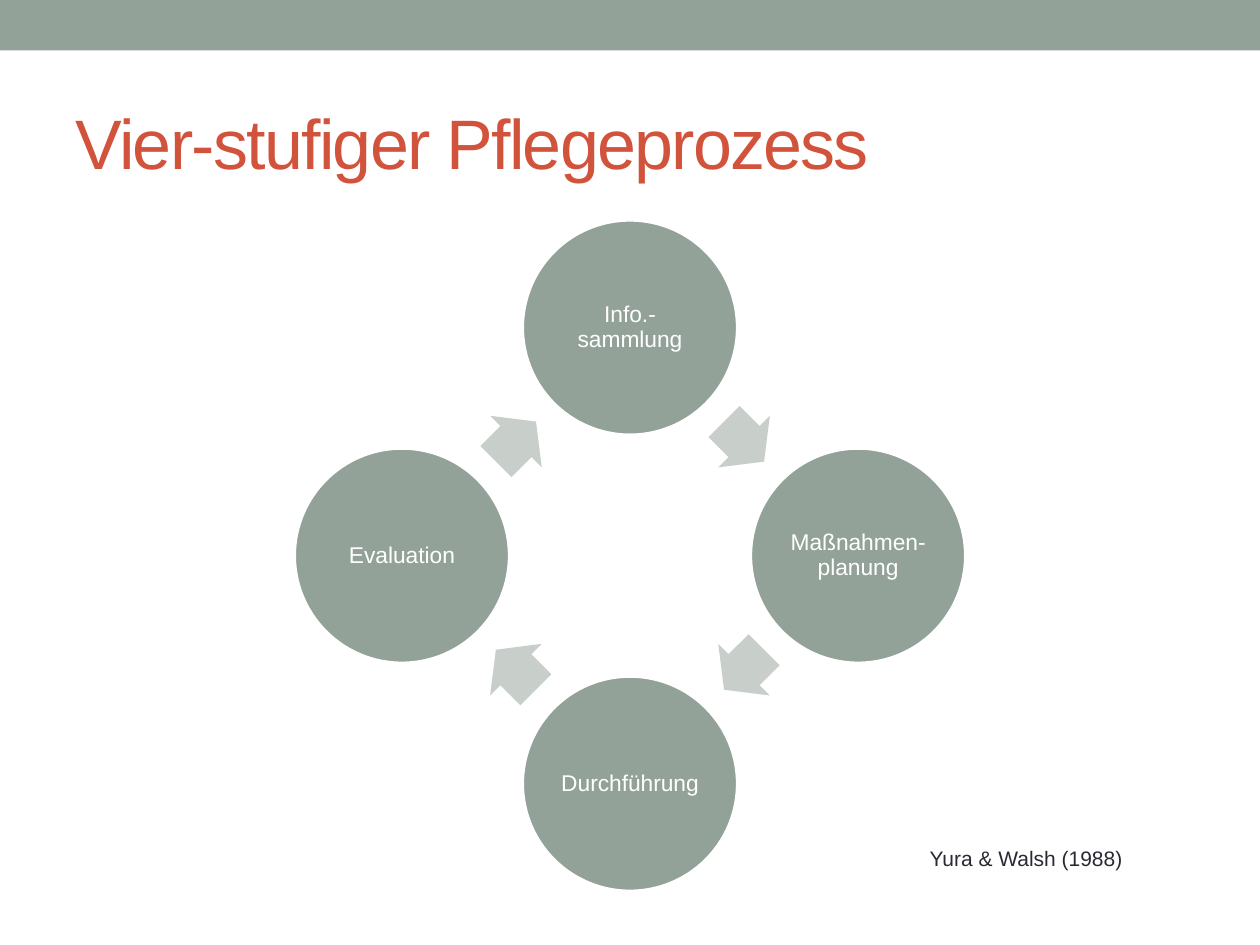
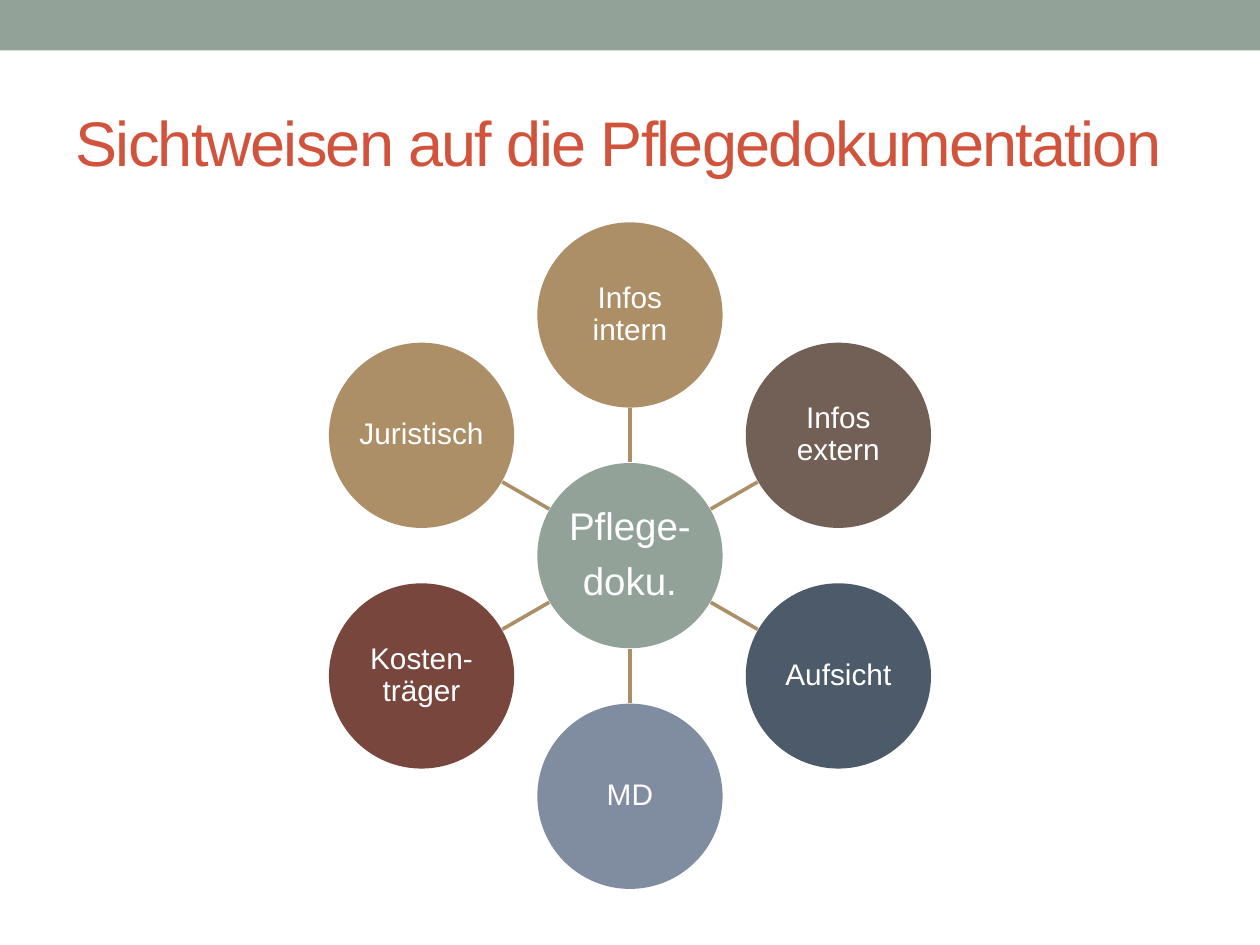
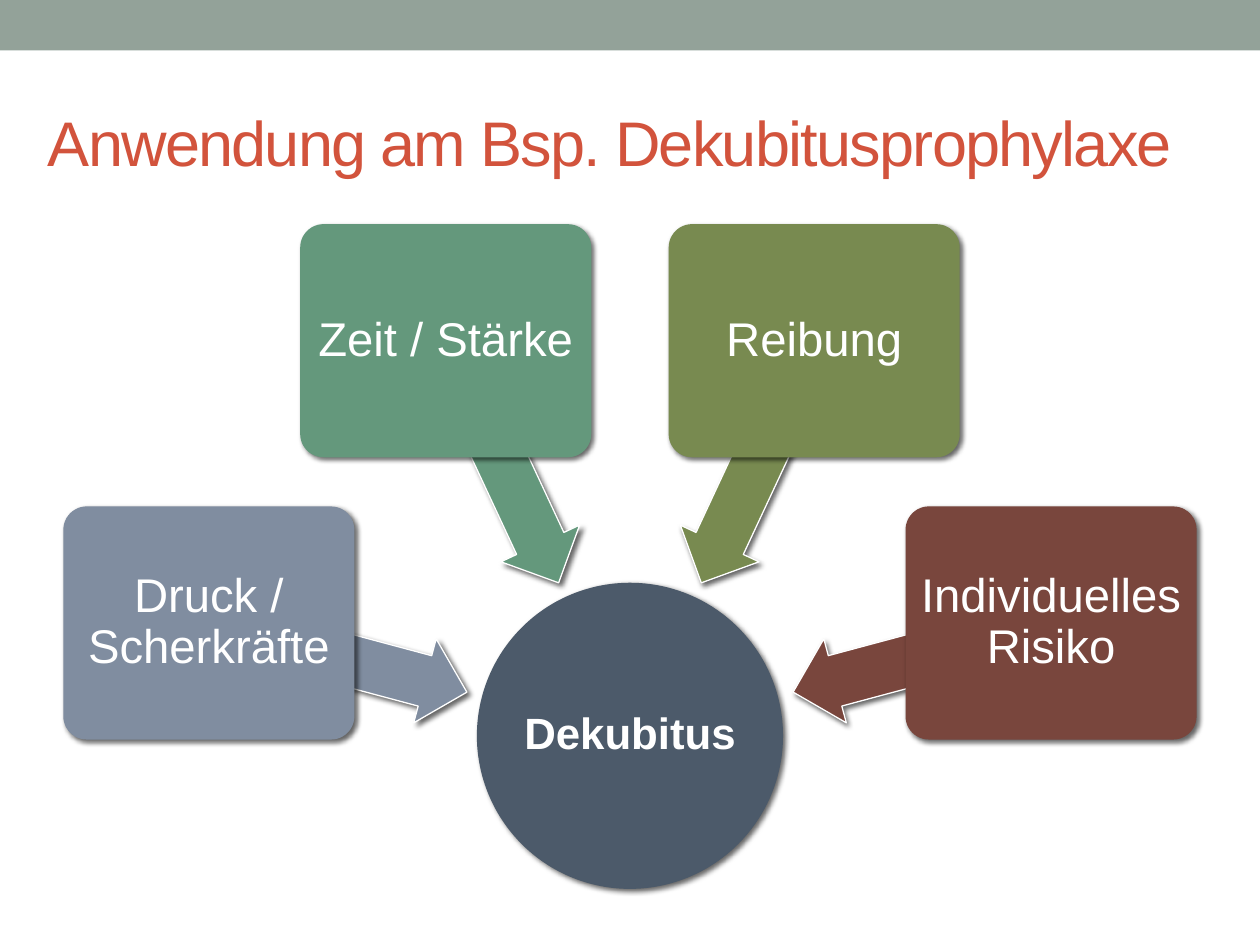
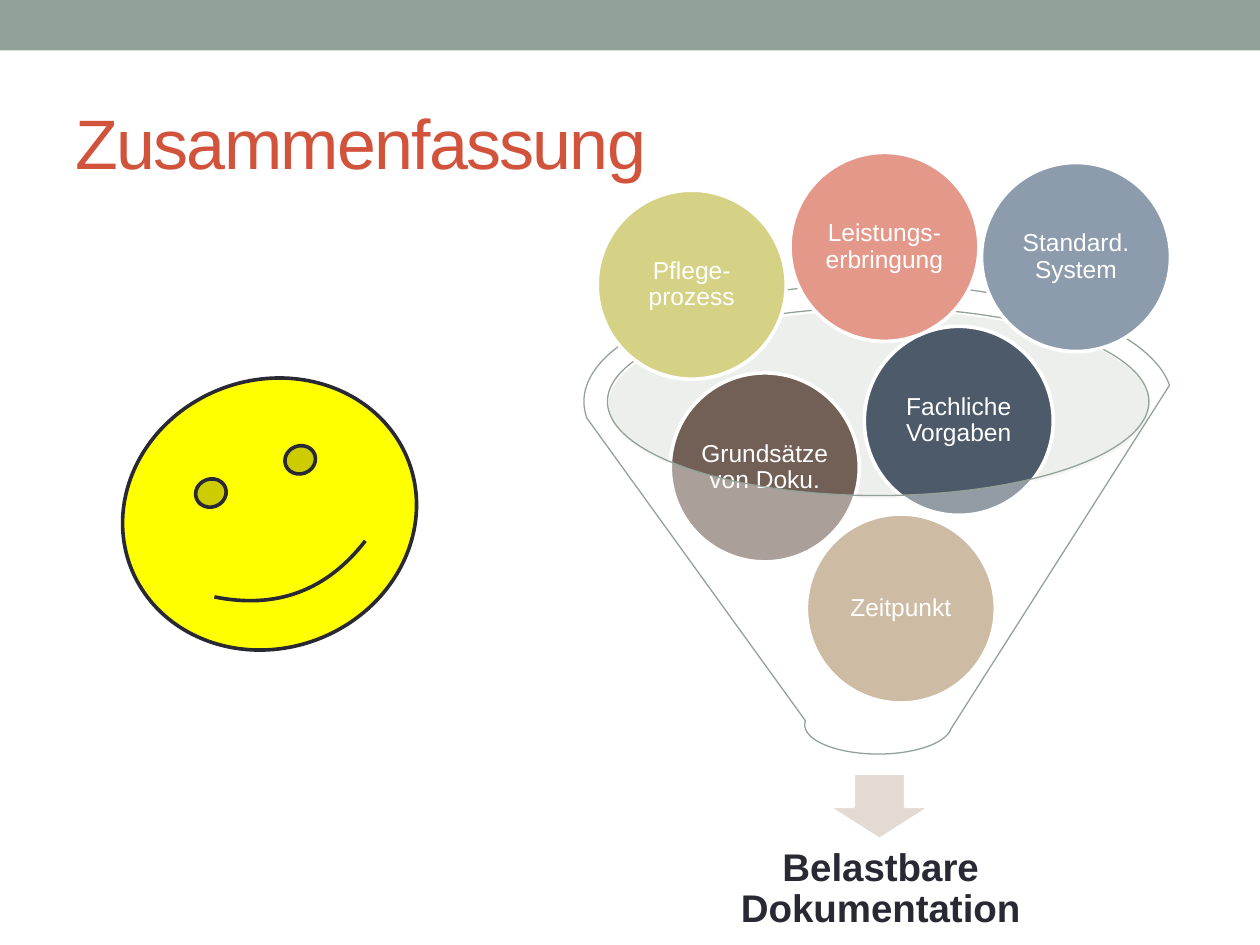
"""Build four slides on the nursing process and its records."""
import dataclasses
import math

import lxml.etree
import pptx
import pptx.dml.color
import pptx.enum.shapes
import pptx.enum.text
import pptx.oxml.ns
import pptx.util


@dataclasses.dataclass(frozen=True)
class Theme:
    font: str = "Arial"
    sage: str = "93A299"
    pale: str = "C8CECA"
    mist: str = "D2D7D4"
    red: str = "D2533C"
    ink: str = "292934"
    white: str = "FFFFFF"
    black: str = "000000"
    tan: str = "AD8F67"
    sand: str = "E3DBD3"
    brown: str = "726056"
    slate: str = "4C5A6A"
    blue: str = "808DA0"
    sky: str = "8C9CAD"
    rust: str = "79463D"
    green: str = "64987C"
    olive: str = "788A50"
    rose: str = "E4988A"
    lime: str = "D5D286"
    yellow: str = "FFFF00"
    head: int = 40
    tight: int = 36
    step: int = 13
    note: int = 12
    view: int = 17
    hub: int = 22
    cause: int = 27
    core: int = 25
    ball: int = 14
    thick: float = 2.08
    thin: float = 0.75


look = Theme()
Inches = pptx.util.Inches
Pt = pptx.util.Pt
RGB = pptx.dml.color.RGBColor.from_string
qn = pptx.oxml.ns.qn
kinds = pptx.enum.shapes.MSO_SHAPE
aligns = pptx.enum.text.PP_ALIGN
middle = pptx.enum.text.MSO_ANCHOR.MIDDLE


def write(shape, text, size, color=look.white, bold=False, inset=0.02,
          align=aligns.CENTER, space=0.9):
    """Fill a shape with formatted text."""
    frame = shape.text_frame
    frame.text = text
    edge = Inches(inset)
    form = {"word_wrap": True, "vertical_anchor": middle,
            "auto_size": pptx.enum.text.MSO_AUTO_SIZE.NONE,
            "margin_left": edge, "margin_right": edge,
            "margin_top": edge, "margin_bottom": edge}
    for key, value in form.items():
        setattr(frame, key, value)
    for para in frame.paragraphs:
        form = {"alignment": align, "line_spacing": space,
                "space_before": Pt(0), "space_after": Pt(0.35 * size)}
        for key, value in form.items():
            setattr(para, key, value)
        for run in para.runs:
            form = {"name": look.font, "size": Pt(size), "bold": bold}
            for key, value in form.items():
                setattr(run.font, key, value)
            run.font.color.rgb = RGB(color)


def put(slide, kind, x, y, wide, high, fill, line=None, width=look.thick,
        turn=0, bends=(), alpha=None, shade=False):
    """Add a preset shape centred on x, y."""
    shape = slide.shapes.add_shape(kind, Inches(x - wide / 2), Inches(y - high / 2),
                                   Inches(wide), Inches(high))
    shape.shadow.inherit = False
    shape.rotation = turn
    for i, bend in enumerate(bends):
        shape.adjustments[i] = bend
    shape.fill.solid()
    shape.fill.fore_color.rgb = RGB(fill)
    if line:
        shape.line.color.rgb = RGB(line)
        shape.line.width = Pt(width)
    else:
        shape.line.fill.background()
    props = shape.element.spPr
    if alpha:
        tone = props.find(qn("a:solidFill"))[0]
        lxml.etree.SubElement(tone, qn("a:alpha"), val=str(alpha * 1000))
    if shade:
        glow = lxml.etree.SubElement(
            props.find(qn("a:effectLst")), qn("a:outerShdw"), blurRad=str(Pt(3)),
            dist=str(Pt(2)), dir="2700000", algn="ctr", rotWithShape="0")
        tone = lxml.etree.SubElement(glow, qn("a:srgbClr"), val=look.black)
        lxml.etree.SubElement(tone, qn("a:alpha"), val="60000")
    return shape


deck = pptx.Presentation()
deck.slide_width, deck.slide_height = Inches(10), Inches(7.5)

heads = [
    ("Vier-stufiger Pflegeprozess", look.head, 0.5),
    ("Sichtweisen auf die Pflegedokumentation", look.tight, 0.5),
    ("Anwendung am Bsp. Dekubitusprophylaxe", look.tight, 0.28),
    ("Zusammenfassung", look.head, 0.5),
]
slides = []
for text, size, left in heads:
    slide = deck.slides.add_slide(deck.slide_layouts[5])
    title = slide.shapes.title
    form = {"left": Inches(left), "top": Inches(0.58),
            "width": Inches(9.5 - left), "height": Inches(1.08)}
    for key, value in form.items():
        setattr(title, key, value)
    write(title, text, size, look.red, inset=0.1, align=aligns.LEFT, space=1.0)
    for props in title.element.iter(qn("a:rPr")):
        props.set("spc", "-100")
    slides.append(slide)
cycle, views, causes, recap = slides

band = put(cycle, kinds.RECTANGLE, 5, 0.2, 10, 0.4, look.sage)
deck.slide_master.shapes.element.insert(2, band.element)

midx, midy = 5, 4.41
steps = ["Info.-sammlung", "Maßnahmen-planung", "Durchführung", "Evaluation"]
for i, text in enumerate(steps):
    angle = math.radians(90 * i - 90)
    disc = put(cycle, kinds.OVAL, midx + 1.81 * math.cos(angle),
               midy + 1.81 * math.sin(angle), 1.71, 1.71, look.sage, look.white)
    write(disc, text, look.step)
    angle += math.pi / 4
    put(cycle, kinds.RIGHT_ARROW, midx + 1.28 * math.cos(angle),
        midy + 1.28 * math.sin(angle), 0.45, 0.58, look.pale,
        turn=45 + 90 * i, bends=(0.6, 0.5))
note = cycle.shapes.add_textbox(Inches(7.28), Inches(6.66), Inches(1.97), Inches(0.3))
write(note, "Yura & Walsh (1988)", look.note, look.ink, inset=0.1,
      align=aligns.LEFT, space=1.0)

hub = put(views, kinds.OVAL, midx, midy, 1.47, 1.47, look.sage)
write(hub, "Pflege-\ndoku.", look.hub)
sights = [
    ("Infos intern", look.tan),
    ("Infos extern", look.brown),
    ("Aufsicht", look.slate),
    ("MD", look.blue),
    ("Kosten-träger", look.rust),
    ("Juristisch", look.tan),
]
for i, (text, color) in enumerate(sights):
    angle = math.radians(60 * i - 90)
    across, down = math.cos(angle), math.sin(angle)
    ends = [Inches(value) for reach in (0.74, 1.17)
            for value in (midx + reach * across, midy + reach * down)]
    spoke = views.shapes.add_connector(pptx.enum.shapes.MSO_CONNECTOR.STRAIGHT, *ends)
    spoke.line.color.rgb = RGB(look.tan)
    spoke.line.width = Pt(look.thick)
    lxml.etree.SubElement(spoke.element.spPr, qn("a:effectLst"))
    disc = put(views, kinds.OVAL, midx + 1.91 * across, midy + 1.91 * down,
               1.47, 1.47, color)
    write(disc, text, look.view, inset=0.01)

basey = 5.84
core = put(causes, kinds.OVAL, midx, basey, 2.43, 2.43, look.slate, shade=True)
write(core, "Dekubitus", look.core, bold=True)
risks = [
    ("Druck / Scherkräfte", look.blue),
    ("Zeit / Stärke", look.green),
    ("Reibung", look.olive),
    ("Individuelles Risiko", look.rust),
]
for i, (text, color) in enumerate(risks):
    turn = 195 + 50 * i
    across, down = math.cos(math.radians(turn)), math.sin(math.radians(turn))
    put(causes, kinds.LEFT_ARROW, midx + 2.4 * across, basey + 2.4 * down, 2.12, 0.69,
        color, look.white, look.thin, turn, (0.6, 0.5), shade=True)
    box = put(causes, kinds.ROUNDED_RECTANGLE, midx + 3.46 * across,
              basey + 3.46 * down, 2.31, 1.85, color, bends=(0.1,), shade=True)
    write(box, text, look.cause, inset=0.06)

put(recap, kinds.OVAL, 6.98, 3.21, 4.3, 1.49, look.mist, alpha=40)
put(recap, kinds.DOWN_ARROW, 6.98, 6.4, 0.83, 0.53, look.sand, look.white)
result = recap.shapes.add_textbox(Inches(4.99), Inches(6.62), Inches(4), Inches(0.88))
write(result, "Belastbare Dokumentation", look.hub, look.ink, bold=True, inset=0.1)
balls = [
    ("Zeitpunkt", 7.15, 4.83, look.tan),
    ("Grundsätze von Doku.", 6.07, 3.71, look.brown),
    ("Fachliche Vorgaben", 7.61, 3.34, look.slate),
    ("Leistungs-erbringung", 7.02, 1.96, look.rose),
    ("Standard. System", 8.54, 2.04, look.sky),
    ("Pflege-prozess", 5.49, 2.26, look.lime),
]
for i, (text, x, y, color) in enumerate(balls):
    if i == 3:
        put(recap, kinds.FUNNEL, 6.97, 4.12, 4.67, 3.73, look.white,
            look.sage, look.thin, alpha=40)
    ball = put(recap, kinds.OVAL, x, y, 1.5, 1.5, color, look.white)
    write(ball, text, look.ball)
put(recap, kinds.SMILEY_FACE, 2.14, 4.08, 2.36, 2.13, look.yellow, look.ink, turn=339.6)

deck.save("out.pptx")
